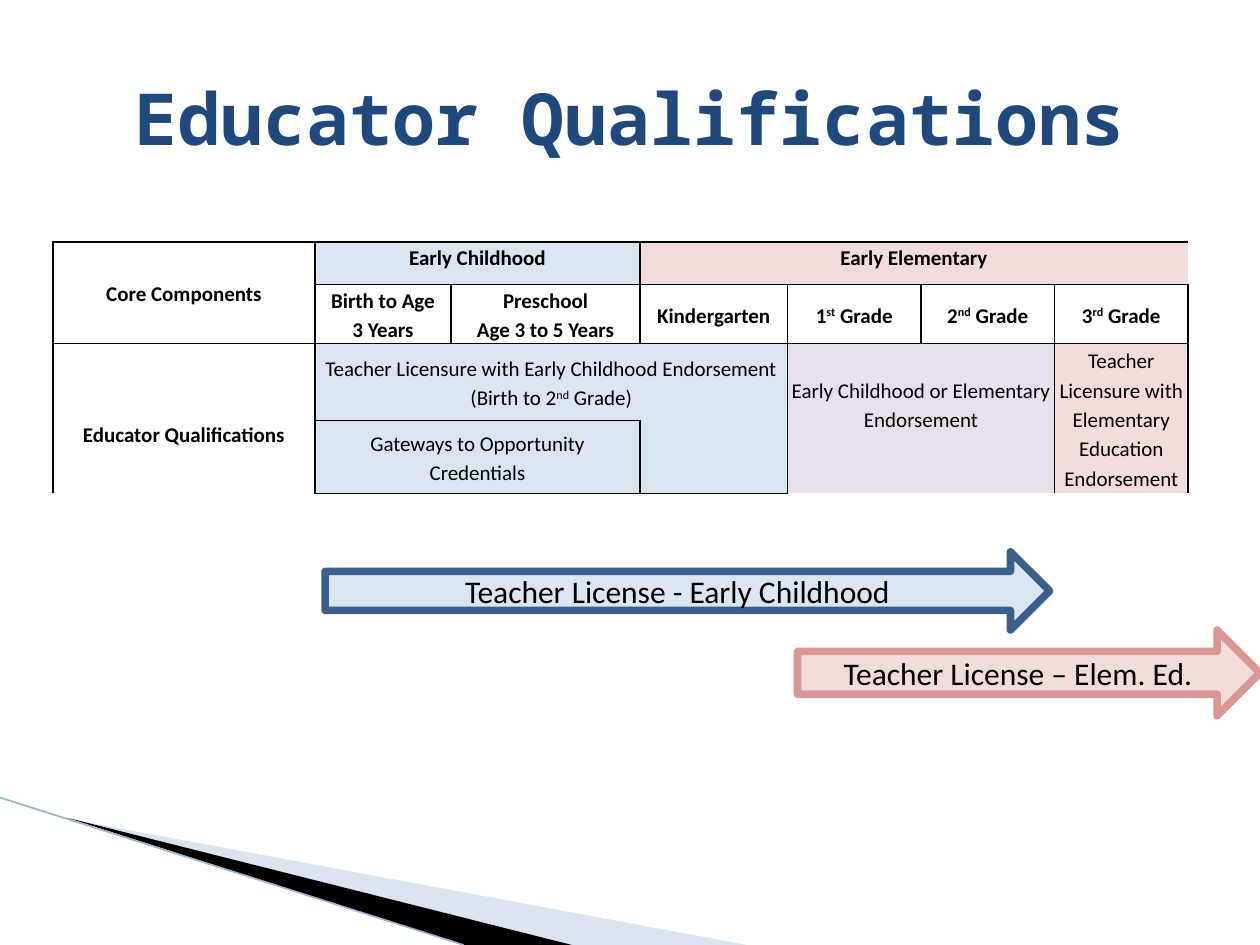
from itertools import product

from lxml import etree
from pptx import Presentation
from pptx.dml.color import RGBColor
from pptx.enum.shapes import MSO_CONNECTOR, MSO_SHAPE
from pptx.enum.text import MSO_ANCHOR, PP_ALIGN
from pptx.oxml import parse_xml
from pptx.oxml.ns import nsdecls, qn
from pptx.util import Inches, Pt

STRAIGHT = MSO_CONNECTOR.STRAIGHT
RIGHT_ARROW = MSO_SHAPE.RIGHT_ARROW
MIDDLE, TOP = MSO_ANCHOR.MIDDLE, MSO_ANCHOR.TOP
CENTER = PP_ALIGN.CENTER

BLACK = RGBColor(0x00, 0x00, 0x00)
NAVY = RGBColor(0x1F, 0x49, 0x7D)
PALE_BLUE = RGBColor(0xDB, 0xE5, 0xF1)
PALE_RED = RGBColor(0xF2, 0xDC, 0xDB)
PALE_VIOLET = RGBColor(0xE6, 0xE0, 0xEC)
ARROW_BLUE = RGBColor(0xDC, 0xE6, 0xF2)
ARROW_BLUE_EDGE = RGBColor(0x3A, 0x5F, 0x8C)
ARROW_RED_EDGE = RGBColor(0xD9, 0x96, 0x94)
SWOOSH_BLUE = RGBColor(0xA7, 0xB9, 0xDB)
SWOOSH_EDGE = RGBColor(0x9E, 0xB3, 0xD6)

WIDTH, HEIGHT = Inches(10), Inches(7.5)
COLUMNS = (20.8, 10.8, 15, 11.7, 10.6, 10.6, 10.6)
ROWS = (4.53, 4.53, 8.13, 7.73)
PAD, LINE = Inches(0.07), Inches(0.23)

TITLE_FONT = {"name": "Noto Sans Mono", "size": Pt(41), "bold": True}
HEAD_FONT = {"name": "Calibri", "size": Pt(12), "bold": True}
BODY_FONT = {"name": "Calibri", "size": Pt(12), "bold": False}
ARROW_FONT = {"name": "Calibri", "size": Pt(18)}
PADDED = {"margin_left": PAD, "margin_right": PAD}

CELLS = [
    (0, 0, 2, 1, "Core Components", HEAD_FONT, None, {}),
    (0, 1, 1, 2, "Early Childhood", HEAD_FONT, PALE_BLUE, {**PADDED, "vertical_anchor": TOP}),
    (0, 3, 1, 4, "Early Elementary", HEAD_FONT, PALE_RED, {**PADDED, "vertical_anchor": TOP}),
    (1, 1, 1, 1, "Birth to Age 3 Years", HEAD_FONT, None, PADDED),
    (1, 2, 1, 1, "Preschool\nAge 3 to 5 Years", HEAD_FONT, None, {}),
    (1, 3, 1, 1, "Kindergarten", HEAD_FONT, None, PADDED),
    (1, 4, 1, 1, "1^st^ Grade", HEAD_FONT, None, {}),
    (1, 5, 1, 1, "2^nd^ Grade", HEAD_FONT, None, {}),
    (1, 6, 1, 1, "3^rd^ Grade", HEAD_FONT, None, {}),
    (2, 0, 2, 1, "Educator Qualifications", HEAD_FONT, None, {"margin_top": LINE}),
    (2, 1, 1, 3, "Teacher Licensure with Early Childhood Endorsement (Birth to 2^nd^ Grade)",
     BODY_FONT, PALE_BLUE, PADDED),
    (2, 4, 2, 2, "Early Childhood or Elementary Endorsement", BODY_FONT, PALE_VIOLET,
     {"margin_bottom": LINE}),
    (2, 6, 2, 1, "Teacher Licensure with Elementary Education Endorsement",
     BODY_FONT, PALE_RED, {}),
    (3, 1, 1, 2, "Gateways to Opportunity Credentials", BODY_FONT, PALE_BLUE, PADDED),
    (3, 3, 1, 1, "", BODY_FONT, PALE_BLUE, {}),
]
OPEN_EDGES = {(2, 1): "B", (3, 3): "T"}


def place(*percents):
    """Turn alternating x and y percentages of the slide into lengths."""
    return [int(share * (HEIGHT if i % 2 else WIDTH) / 100) for i, share in enumerate(percents)]


def apply(target, values):
    """Set each named value on the target."""
    for name, value in values.items():
        setattr(target, name, value)


def write(frame, text, font, color=BLACK, spacing=None):
    """Fill a frame with centred paragraphs; text between carets is raised."""
    for i, line in enumerate(text.split("\n")):
        para = frame.add_paragraph() if i else frame.paragraphs[0]
        apply(para, {"alignment": CENTER, "line_spacing": spacing})
        for j, part in enumerate(line.split("^")):
            span = para.add_run()
            span.text = part
            apply(span.font, font)
            span.font.color.rgb = color
            if j % 2:
                span.font._element.set("baseline", "30000")


def border(cell, edges):
    """Draw the given edges of a cell in black and clear the others."""
    properties = cell._tc.get_or_add_tcPr()
    for edge in "LRTB":
        paint = '<a:solidFill><a:srgbClr val="000000"/></a:solidFill>' if edge in edges else "<a:noFill/>"
        properties.append(parse_xml(f'<a:ln{edge} {nsdecls("a")} w="12700">{paint}</a:ln{edge}>'))


def add_cell(table, row, column, height, width, text, font, color, layout):
    """Merge, border, fill and write one block of the table."""
    last_row, last_column = row + height - 1, column + width - 1
    origin = table.cell(row, column)
    if height * width > 1:
        origin.merge(table.cell(last_row, last_column))
    for r, c in product(range(row, last_row + 1), range(column, last_column + 1)):
        outer = {"L": c == column, "R": c == last_column, "T": r == row, "B": r == last_row}
        hidden = OPEN_EDGES.get((row, column), "")
        cell = table.cell(r, c)
        border(cell, [edge for edge, drawn in outer.items() if drawn and edge not in hidden])
        if color is None:
            cell.fill.background()
        else:
            cell.fill.solid()
            cell.fill.fore_color.rgb = color
    margins = dict.fromkeys(("margin_left", "margin_right", "margin_top", "margin_bottom"), 0)
    apply(origin, {**margins, "vertical_anchor": MIDDLE, **layout})
    if text:
        write(origin.text_frame, text, font, spacing=1.15)


def add_grid(page):
    """Add the table of qualifications by age and grade."""
    area = place(4.2, 25.6, sum(COLUMNS), sum(ROWS))
    table = page.shapes.add_table(len(ROWS), len(COLUMNS), *area).table
    apply(table, {"first_row": False, "horz_banding": False})
    for column, share in zip(table.columns, COLUMNS):
        column.width = place(share)[0]
    for row, share in zip(table.rows, ROWS):
        row.height = place(0, share)[1]
    for entry in CELLS:
        add_cell(table, *entry)


def add_title(page, text):
    """Add the slide heading."""
    box = page.shapes.add_textbox(*place(5, 4, 90, 16.67))
    apply(box.text_frame, {"word_wrap": True, "vertical_anchor": MIDDLE})
    write(box.text_frame, text, TITLE_FONT, NAVY)


def add_arrow(page, area, text, fill, edge):
    """Add a labelled block arrow."""
    arrow = page.shapes.add_shape(RIGHT_ARROW, *place(*area))
    arrow.shadow.inherit = False
    arrow.fill.solid()
    arrow.fill.fore_color.rgb = fill
    arrow.line.color.rgb = edge
    arrow.line.width = Pt(4.33)
    apply(arrow.text_frame, {"word_wrap": True, "vertical_anchor": MIDDLE})
    write(arrow.text_frame, text, ARROW_FONT)


def add_wedge(page, corners, color, opacity=100):
    """Add a filled outline without a border."""
    start, *others = [place(*corner) for corner in corners]
    builder = page.shapes.build_freeform(*start)
    builder.add_line_segments(others, close=True)
    wedge = builder.convert_to_shape()
    wedge.shadow.inherit = False
    wedge.fill.solid()
    wedge.fill.fore_color.rgb = color
    wedge.line.fill.background()
    if opacity < 100:
        paint = wedge._element.spPr.find(".//" + qn("a:srgbClr"))
        etree.SubElement(paint, qn("a:alpha")).set("val", str(opacity * 1000))


def add_swoosh(page):
    """Add the decoration in the lower left corner."""
    add_wedge(page, [(5.5, 86.67), (59.3, 100), (45.5, 100)], SWOOSH_BLUE, 40)
    add_wedge(page, [(5.3, 86.53), (45.4, 100), (36.8, 100)], BLACK)
    edge = page.shapes.add_connector(STRAIGHT, *place(0, 84.4, 36.8, 100))
    edge.line.color.rgb = SWOOSH_EDGE
    edge.line.width = Pt(0.95)
    etree.SubElement(edge._element.spPr, qn("a:effectLst"))


def main():
    """Build the slide and save it."""
    deck = Presentation()
    apply(deck, {"slide_width": WIDTH, "slide_height": HEIGHT})
    page = deck.slides.add_slide(deck.slide_layouts[6])
    add_swoosh(page)
    add_grid(page)
    add_title(page, "Educator Qualifications")
    add_arrow(page, (25.8, 58.4, 57.5, 8.27), "Teacher License - Early Childhood",
              ARROW_BLUE, ARROW_BLUE_EDGE)
    add_arrow(page, (63.3, 66.67, 36.7, 9.07), "Teacher License – Elem. Ed.",
              PALE_RED, ARROW_RED_EDGE)
    deck.save("out.pptx")


if __name__ == "__main__":
    main()
